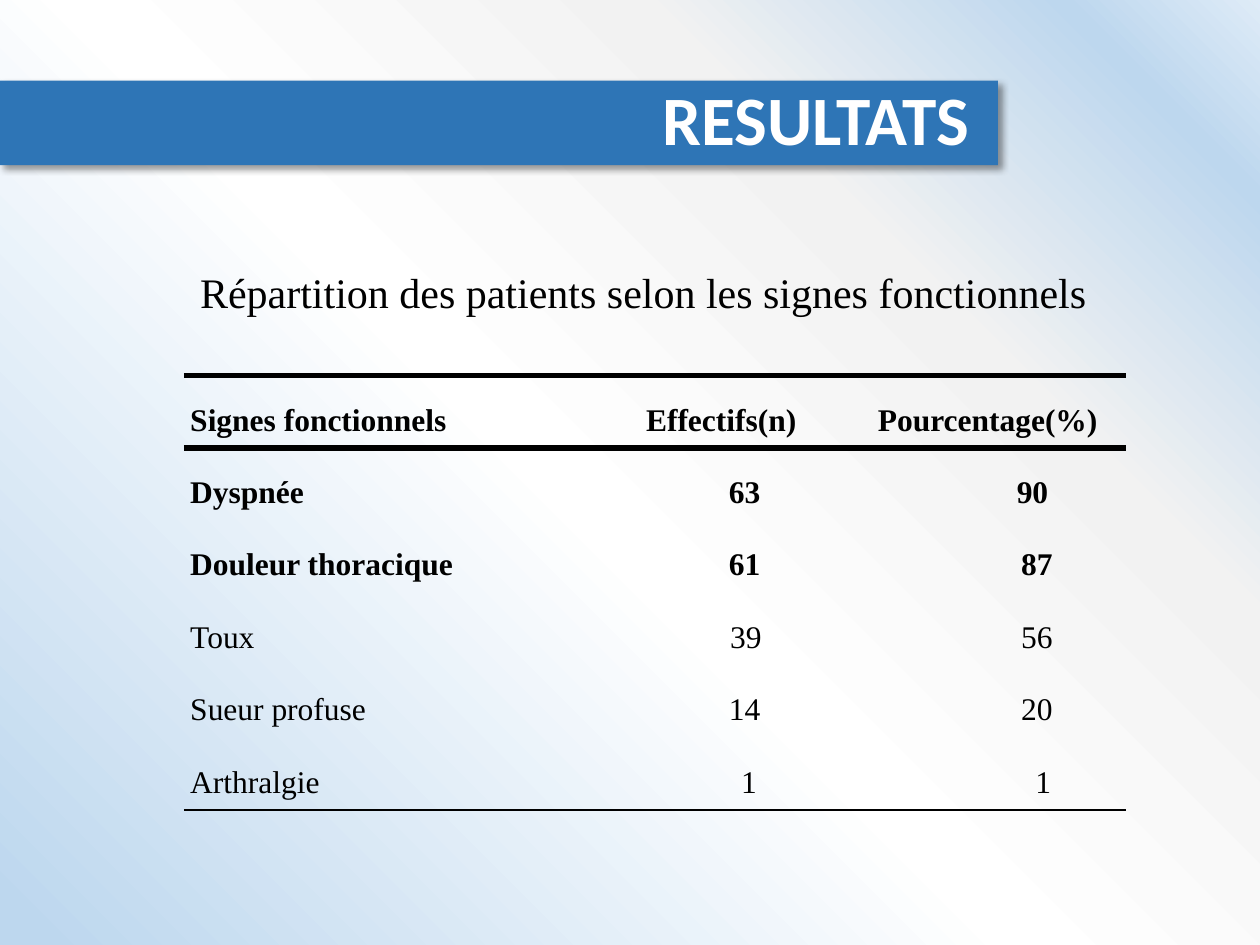
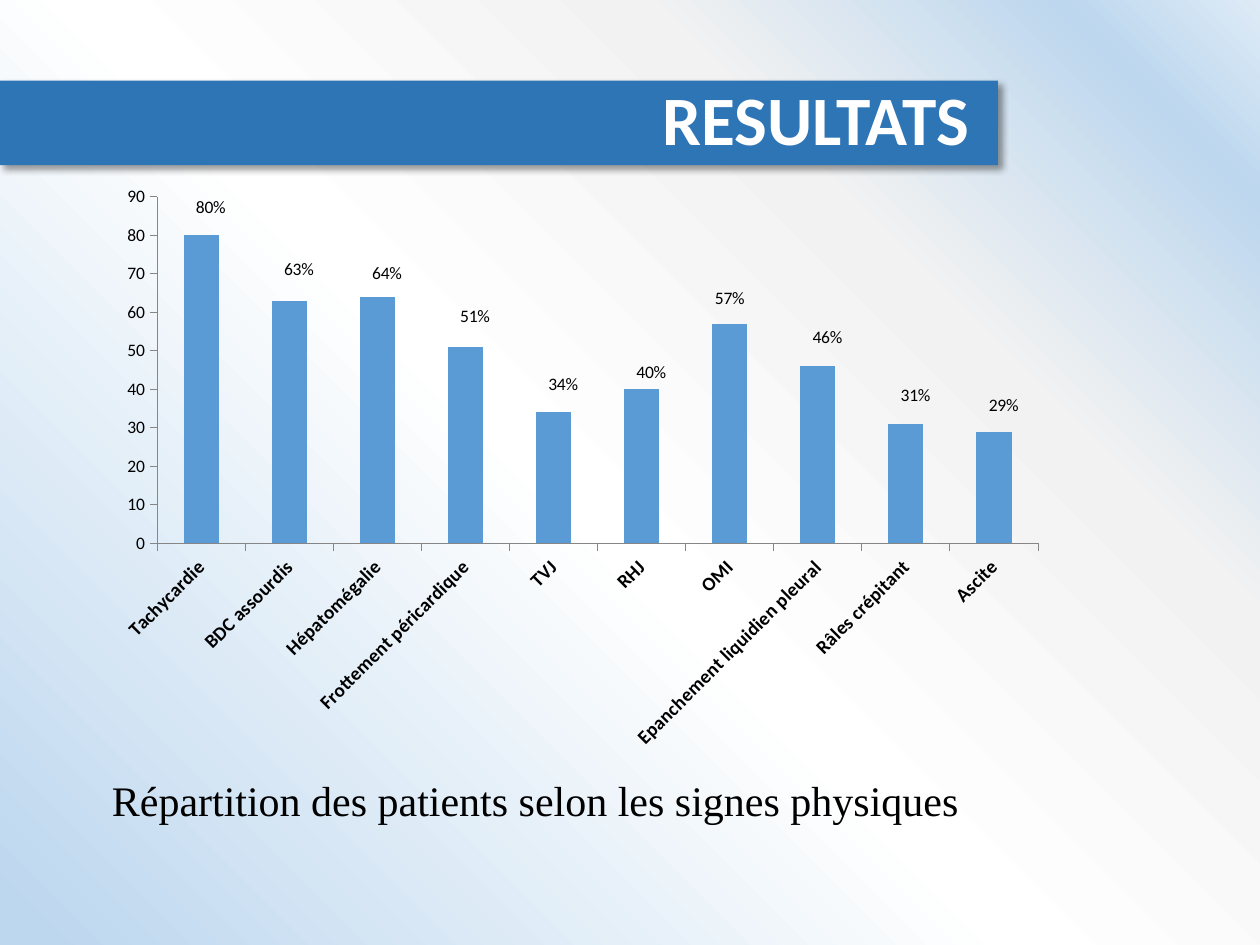
from pptx import Presentation
from pptx import util as u
from pptx.chart.data import CategoryChartData
from pptx.dml.color import RGBColor
from pptx.enum import chart as ch, text
from pptx.oxml import parse_xml
from pptx.oxml.ns import nsdecls


class Theme:
    band = RGBColor.from_string("2E75B6")
    bar = RGBColor.from_string("5B9BD5")
    axis = RGBColor.from_string("868686")
    white = RGBColor.from_string("FFFFFF")
    black = RGBColor.from_string("000000")
    gradient = [(0, "DEEBF7"), (9, "BDD7EE"), (28, "F2F2F2"), (54, "FFFFFF"), (98, "BDD7EE")]
    sans, serif = "Calibri", "Times New Roman"
    title, caption, cell, category, label = 39.6, 24, 18, 11, 10


def style(font, name, size, color, bold=False):
    font.name, font.size, font.bold = name, u.Pt(size), bold
    font.color.rgb = color


def add_result_slide(prs, caption, left, top):
    s = prs.slides.add_slide(prs.slide_layouts[5])
    sp = s.shapes.title
    sp.left, sp.top, sp.width, sp.height = (u.Inches(v) for v in (0, 0.64, 7.92, 0.67))
    sp.fill.solid()
    sp.fill.fore_color.rgb = Theme.band
    sp._element.spPr.append(parse_xml(
        f'<a:effectLst {nsdecls("a")}><a:outerShdw blurRad="50800" dist="38100" dir="2700000" '
        'algn="tl" rotWithShape="0"><a:srgbClr val="000000"><a:alpha val="40000"/></a:srgbClr>'
        '</a:outerShdw></a:effectLst>'))
    tf = sp.text_frame
    tf.text = "RESULTATS"
    tf.auto_size = text.MSO_AUTO_SIZE.NONE
    tf.vertical_anchor = text.MSO_ANCHOR.MIDDLE
    tf.margin_right = u.Inches(0.23)
    p = tf.paragraphs[0]
    p.alignment, p.line_spacing = text.PP_ALIGN.RIGHT, 0.9
    style(p.runs[0].font, Theme.sans, Theme.title, Theme.white, True)

    tf = s.shapes.add_textbox(u.Inches(left), u.Inches(top), u.Inches(7.6), u.Inches(0.5)).text_frame
    tf.word_wrap = True
    tf.text = caption
    style(tf.paragraphs[0].runs[0].font, Theme.serif, Theme.caption, Theme.black)
    return s


prs = Presentation()
prs.slide_width, prs.slide_height = u.Inches(10), u.Inches(7.5)

fill = prs.slide_master.background.fill
fill.solid()
stops = "".join(f'<a:gs pos="{pos * 1000}"><a:srgbClr val="{color}"/></a:gs>'
                for pos, color in Theme.gradient)
solid = prs.slide_master._element.xpath("p:cSld/p:bg/p:bgPr/a:solidFill")[0]
solid.getparent().replace(solid, parse_xml(
    f'<a:gradFill {nsdecls("a")} rotWithShape="1"><a:gsLst>{stops}</a:gsLst>'
    '<a:path path="circle"><a:fillToRect l="100000" b="100000"/></a:path></a:gradFill>'))

s = add_result_slide(prs, "Répartition des patients selon les signes fonctionnels", 1.49, 2.07)
rows = [
    (("Signes fonctionnels", 0), ("Effectifs(n)", 0.24), ("Pourcentage(%)", 0.06)),
    (("Dyspnée", 0), ("63", 0.61), ("90", 0.77)),
    (("Douleur thoracique", 0), ("61", 0.61), ("87", 0.84)),
    (("Toux", 0), ("39", 0.63), ("56", 0.84)),
    (("Sueur profuse", 0), ("14", 0.61), ("20", 0.84)),
    (("Arthralgie", 0), ("1", 0.68), ("1", 0.94)),
]
rules = [3.75, 3.75, 0, 0, 0, 0, 1]
table = s.shapes.add_table(len(rows), 3, u.Inches(1.46), u.Inches(2.98),
                           u.Inches(7.48), u.Inches(3.45)).table
table.first_row = table.horz_banding = False
table._tbl.tblPr[0].text = "{2D5ABB26-0587-4C30-8999-92F81FD0307C}"
for column, width in zip(table.columns, (3.07, 2.15, 2.26)):
    column.width = u.Inches(width)
for i, row in enumerate(rows):
    for j, (value, indent) in enumerate(row):
        cell = table.cell(i, j)
        cell.fill.background()
        cell.vertical_anchor = text.MSO_ANCHOR.MIDDLE
        cell.margin_left = cell.margin_right = u.Inches(0.05)
        cell.margin_top = cell.margin_bottom = 0
        cell.text_frame.text = value
        p = cell.text_frame.paragraphs[0]
        p.line_spacing = 1.5
        p.alignment = text.PP_ALIGN.CENTER if j else text.PP_ALIGN.LEFT
        p._p.get_or_add_pPr().set("marL", str(u.Inches(indent)))
        style(p.runs[0].font, Theme.serif, Theme.cell, Theme.black, i < 3)
        for k, (side, width) in enumerate(zip("LRTB", (0, 0, rules[i], rules[i + 1]))):
            ink = f'<a:solidFill><a:srgbClr val="{Theme.black}"/></a:solidFill>' if width else '<a:noFill/>'
            cell._tc.get_or_add_tcPr().insert(k, parse_xml(
                f'<a:ln{side} {nsdecls("a")} w="{u.Pt(width)}">{ink}</a:ln{side}>'))

s = add_result_slide(prs, "Répartition des patients selon les signes physiques", 0.79, 6.1)
signs = [
    ("Tachycardie", 80, 0.01, -0.31),
    ("BDC assourdis", 63, 0.01, -0.26),
    ("Hépatomégalie", 64, 0.01, -0.25),
    ("Frottement péricardique", 51, 0.01, -0.22),
    ("TVJ", 34, 0.01, -0.16),
    ("RHJ", 40, 0.01, -0.16),
    ("OMI", 57, 0, -0.23),
    ("Epanchement liquidien pleural", 46, 0.01, -0.2),
    ("Râles crépitant", 31, 0.01, -0.15),
    ("Ascite", 29, 0.01, -0.14),
]
data = CategoryChartData()
data.categories = [sign[0] for sign in signs]
data.add_series("Series 1", [sign[1] for sign in signs])
chart = s.shapes.add_chart(ch.XL_CHART_TYPE.COLUMN_STACKED, u.Inches(0.83), u.Inches(1.39),
                           u.Inches(7.56), u.Inches(4.65), data).chart
chart.has_legend = chart.has_title = False
style(chart.font, Theme.sans, Theme.label, Theme.black)

for axis in (chart.category_axis, chart.value_axis):
    axis.has_major_gridlines = False
    axis.major_tick_mark = ch.XL_TICK_MARK.OUTSIDE
    axis.format.line.color.rgb = Theme.axis
    axis.format.line.width = u.Pt(0.5)
style(chart.category_axis.tick_labels.font, Theme.sans, Theme.category, Theme.black, True)
chart.category_axis._element.xpath("c:txPr/a:bodyPr")[0].set("rot", "-2700000")
chart.value_axis.minimum_scale, chart.value_axis.maximum_scale = 0, 90
chart.value_axis.major_unit = 10

plot = chart.plots[0]
plot.gap_width, plot.overlap, plot.vary_by_categories = 150, 100, False
series = plot.series[0]
series.format.fill.solid()
series.format.fill.fore_color.rgb = Theme.bar
series.data_labels.show_value = True
for i, (name, value, dx, dy) in enumerate(signs):
    label = series.points[i].data_label
    label.text_frame.text = f"{value}%"
    style(label.text_frame.paragraphs[0].runs[0].font, Theme.sans, Theme.label, Theme.black)
    label._dLbl.insert(1, parse_xml(
        f'<c:layout {nsdecls("c")}><c:manualLayout><c:x val="{dx}"/><c:y val="{dy}"/>'
        '</c:manualLayout></c:layout>'))

labels = series.data_labels._element
for leader in labels.xpath("c:showLeaderLines"):
    leader.set("val", "0")
labels.append(parse_xml(
    f'<c:extLst {nsdecls("c")}><c:ext uri="{{CE6537A1-D6FC-4f65-9D91-7224C49458BB}}" '
    'xmlns:c15="http://schemas.microsoft.com/office/drawing/2012/chart">'
    '<c15:showLeaderLines val="0"/></c:ext></c:extLst>'))

prs.save("out.pptx")
